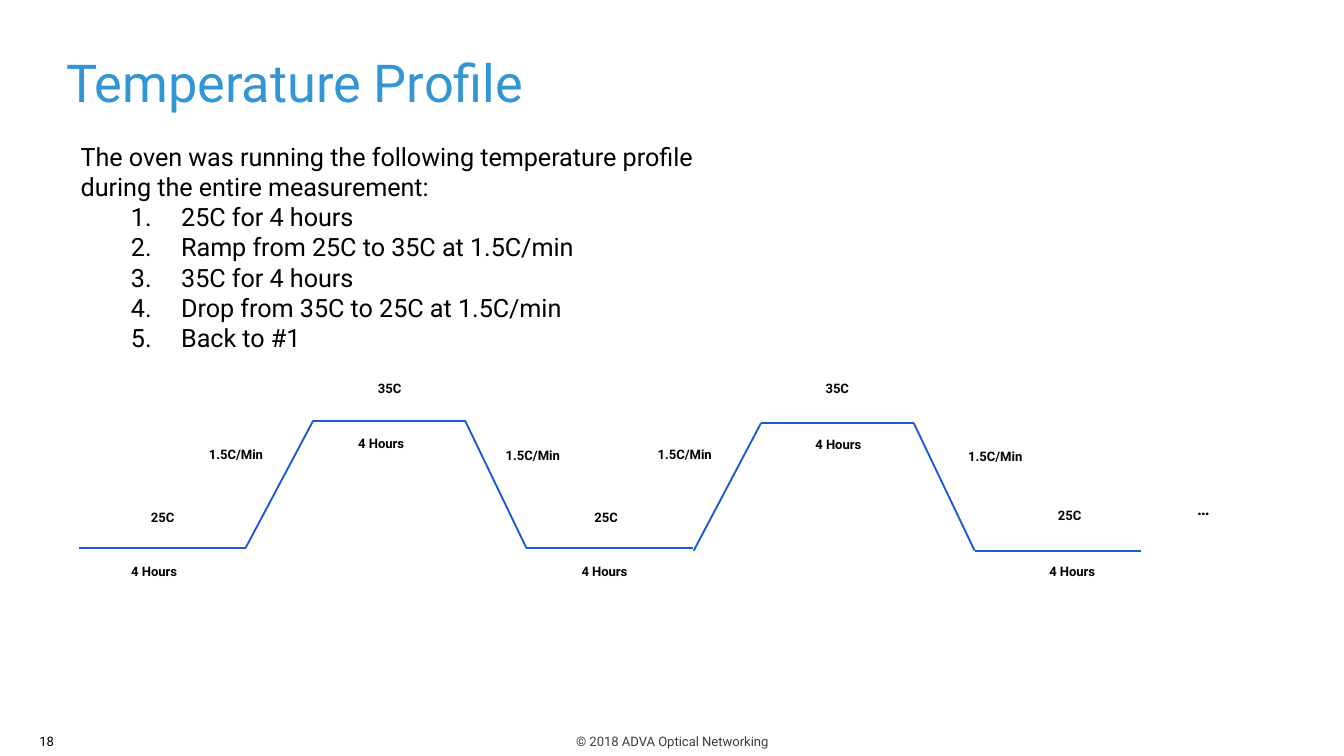
"""Build the slide showing the oven's temperature profile."""
from collections import namedtuple
from itertools import pairwise

from lxml import etree
from pptx import Presentation
from pptx.dml.color import RGBColor
from pptx.enum.shapes import MSO_CONNECTOR
from pptx.enum.text import MSO_ANCHOR, MSO_AUTO_SIZE, PP_ALIGN
from pptx.oxml.ns import qn
from pptx.util import Cm, Pt

STRAIGHT = MSO_CONNECTOR.STRAIGHT
TOP, BOTTOM = MSO_ANCHOR.TOP, MSO_ANCHOR.BOTTOM
FIXED = MSO_AUTO_SIZE.NONE
LEFT, CENTER, RIGHT = PP_ALIGN.LEFT, PP_ALIGN.CENTER, PP_ALIGN.RIGHT

Theme = namedtuple("Theme", "font blue line black grey title body dots small")
theme = Theme(
    font="Roboto",
    blue=RGBColor(0x32, 0x96, 0xD5),
    line=RGBColor(0x1A, 0x59, 0xD4),
    black=RGBColor(0, 0, 0),
    grey=RGBColor(0x3C, 0x3C, 0x3B),
    title=Pt(28),
    body=Pt(13.5),
    dots=Pt(9),
    small=Pt(7),
)


def add_span(para, text, size, color, bold=False):
    span = para.add_run()
    span.text = text
    span.font.name = theme.font
    span.font.size = size
    span.font.bold = bold
    span.font.color.rgb = color


def add_label(text, left, top, width, height, size=theme.small,
              color=theme.black, bold=True, align=CENTER):
    box = page.shapes.add_textbox(Cm(left), Cm(top), Cm(width), Cm(height))
    box.text_frame.word_wrap = True
    para = box.text_frame.paragraphs[0]
    para.alignment = align
    add_span(para, text, size, color, bold)


deck = Presentation()
deck.slide_width, deck.slide_height = Cm(25.4), Cm(14.29)
page = deck.slides.add_slide(deck.slide_layouts[1])

title, body = page.placeholders
title.left, title.top, title.width, title.height = Cm(1), Cm(0), Cm(23.11), Cm(2.16)
frame = title.text_frame
frame.auto_size = FIXED
frame.vertical_anchor = BOTTOM
frame.margin_left = Cm(0.25)
frame.margin_top = frame.margin_right = frame.margin_bottom = 0
para = frame.paragraphs[0]
para.alignment = LEFT
para.line_spacing = 0.9
add_span(para, "Temperature Profile", theme.title, theme.blue)

body.left, body.top, body.width, body.height = Cm(1.27), Cm(2.54), Cm(12.7), Cm(4.29)
frame = body.text_frame
frame.auto_size = FIXED
frame.vertical_anchor = TOP
lines = [
    "The oven was running the following temperature profile during the entire measurement:",
    "25C for 4 hours",
    "Ramp from 25C to 35C at 1.5C/min",
    "35C for 4 hours",
    "Drop from 35C to 25C at 1.5C/min",
    "Back to #1",
]
for index, text in enumerate(lines):
    para = frame.add_paragraph() if index else frame.paragraphs[0]
    para.space_before = Pt(0)
    properties = para._p.get_or_add_pPr()
    if index:
        para.level = 1
        properties.set("marL", str(Cm(1.9)))
        properties.set("indent", str(Cm(-0.95)))
        etree.SubElement(properties, qn("a:buFont"), typeface=theme.font)
        etree.SubElement(properties, qn("a:buAutoNum"), type="arabicPeriod")
    else:
        properties.set("marL", "0")
        properties.set("indent", "0")
        etree.SubElement(properties, qn("a:buNone"))
    add_span(para, text, theme.body, theme.black)

profiles = [
    ([1.5, 4.64, 5.92, 8.79, 9.95, 13.09], "LLHHLL", 10.36, 7.95),
    ([13.11, 14.38, 17.27, 18.42, 21.56], "LHHLL", 10.41, 8),
]
for stops, levels, low, high in profiles:
    points = [(Cm(x), Cm(low if level == "L" else high)) for x, level in zip(stops, levels)]
    for start, end in pairwise(points):
        segment = page.shapes.add_connector(STRAIGHT, *start, *end)
        segment.line.color.rgb = theme.line
        segment.line.width = Pt(1)
        etree.SubElement(segment._element.spPr, qn("a:effectLst"))

labels = [
    ("25C", 5.89, [(0.13, 9.5), (8.51, 9.5), (17.27, 9.47)]),
    ("35C", 5.89, [(4.42, 7.06), (12.88, 7.06)]),
    ("4 Hours ", 5.89, [(0, 10.52), (4.29, 8.1), (8.51, 10.52), (12.93, 8.13), (17.35, 10.52)]),
    ("1.5C/Min", 2.06, [(3.43, 8.31), (9.04, 8.33), (11.91, 8.31), (17.78, 8.36)]),
]
for text, width, places in labels:
    for left, top in places:
        add_label(text, left, top, width, 0.84)
add_label("…", 19.96, 9.3, 5.56, 0.64, size=theme.dots)

add_label("© 2018 ADVA Optical Networking", 0.64, 13.74, 24.13, 0.56,
          color=theme.grey, bold=False)
add_label("18", 0, 13.74, 1.27, 0.56, bold=False, align=RIGHT)

deck.save("out.pptx")
